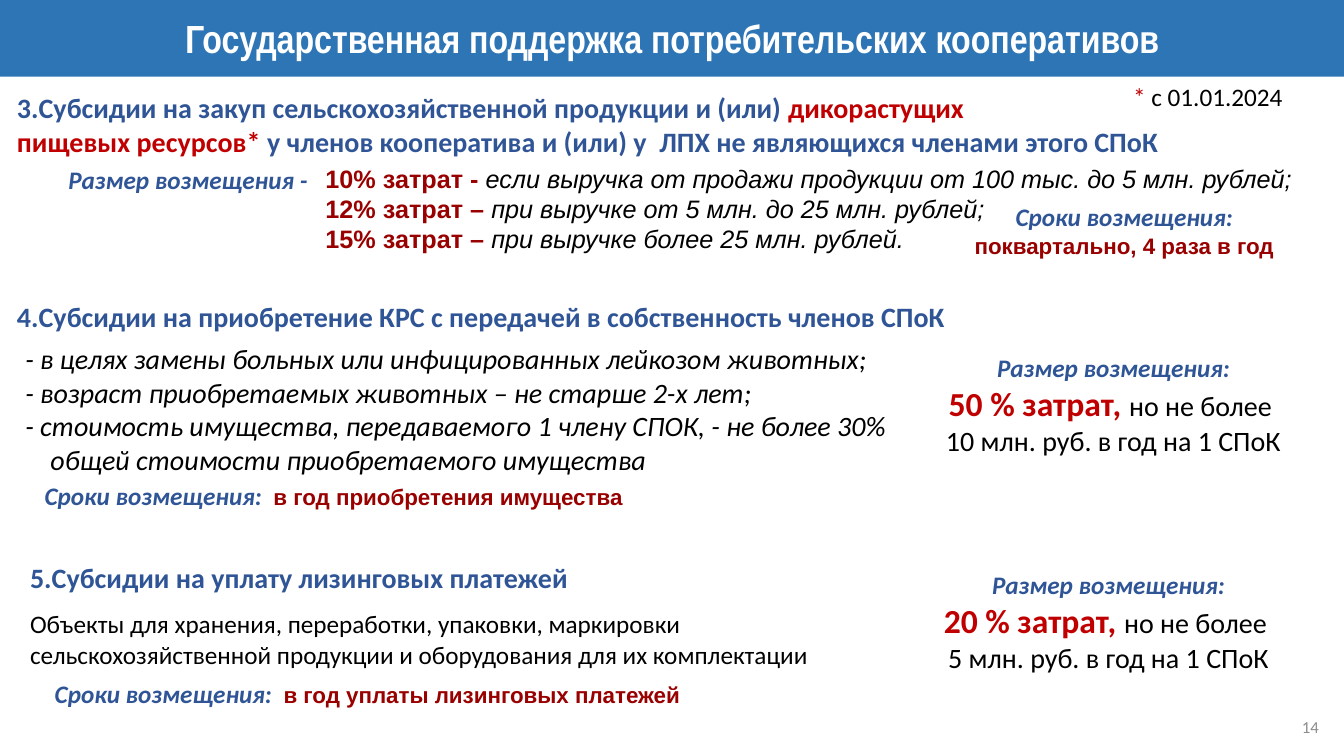
from pptx import Presentation
from pptx import util as u
from pptx.dml.color import RGBColor
from pptx.enum import shapes, text
from pptx.oxml.ns import qn

W, H = u.Inches(13.33), u.Inches(7.5)
LEFT, CENTER, RIGHT = text.PP_ALIGN.LEFT, text.PP_ALIGN.CENTER, text.PP_ALIGN.RIGHT

COLORS = {"white": "FFFFFF", "banner": "2E75B6", "blue": "2F5597", "red": "C00000",
          "dark_red": "990000", "black": "000000", "gray": "8C8C8C"}

# Text styles: font, size, colour, bold, italic
STYLES = {
    "title": ("Arial Narrow", 28, "white", True, False),
    "heading": ("Calibri", 20, "blue", True, False),
    "accent": ("Calibri", 20, "red", True, False),
    "label": ("Calibri", 18, "blue", True, True),
    "rate": ("Arial", 18, "dark_red", True, False),
    "condition": ("Arial", 18, "black", False, True),
    "term": ("Arial", 16, "dark_red", True, False),
    "list": ("Calibri", 20, "black", False, True),
    "share": ("Calibri", 24, "red", True, False),
    "limit": ("Calibri", 20, "black", False, False),
    "plain": ("Calibri", 18, "black", False, False),
    "star": ("Calibri", 18, "red", False, False),
    "number": ("Calibri", 12, "gray", False, False),
}


def color(name):
    return RGBColor.from_string(COLORS[name])


def area(x, y, w, h):
    """Turn percentages of the slide into lengths."""
    return [int(side * share / 100) for side, share in zip((W, H, W, H), (x, y, w, h))]


def place(sp, box):
    sp.left, sp.top, sp.width, sp.height = area(*box)


def fill_white(sp):
    sp.fill.solid()
    sp.fill.fore_color.rgb = color("white")
    sp.line.color.rgb = color("white")
    sp.line.width = u.Pt(0.75)


def write(sp, lines, align=LEFT, anchor=text.MSO_ANCHOR.TOP, wrap=True):
    """Each line is a list of (style, text) pairs."""
    tf = sp.text_frame
    tf.word_wrap = wrap
    tf.auto_size = text.MSO_AUTO_SIZE.NONE
    tf.vertical_anchor = anchor
    for i, line in enumerate(lines):
        p = tf.paragraphs[0] if i == 0 else tf.add_paragraph()
        p.alignment = align
        p.space_before = u.Pt(0)
        for style, words in line:
            r = p.add_run()
            r.text = words
            font, size, ink, r.font.bold, r.font.italic = STYLES[style]
            r.font.name, r.font.size = font, u.Pt(size)
            r.font.color.rgb = color(ink)


def add_text(s, box, lines, **options):
    sp = s.shapes.add_textbox(*area(*box))
    write(sp, lines, **options)


def add_panel(s, box, lines):
    sp = s.shapes.add_shape(shapes.MSO_SHAPE.RECTANGLE, *area(*box))
    sp.shadow.inherit = False
    fill_white(sp)
    write(sp, lines)


def add_banner(s, words):
    sp = s.shapes.title
    place(sp, (0, 0, 100, 10.13))
    sp.fill.solid()
    sp.fill.fore_color.rgb = color("banner")
    write(sp, [[("title", words)]], align=CENTER, anchor=text.MSO_ANCHOR.MIDDLE)


def add_list(s, box, items):
    sp = s.placeholders[1]
    place(sp, box)
    fill_white(sp)
    write(sp, [[("list", item)] for item in items])
    # Typed dashes replace bullets; wrapped lines hang
    for p in sp.text_frame.paragraphs:
        pPr = p._p.get_or_add_pPr()
        pPr.set("marL", str(u.Inches(0.25)))
        pPr.set("indent", str(-u.Inches(0.25)))
        pPr.append(pPr.makeelement(qn("a:buNone"), {}))


def add_heading(s, x, y, words):
    add_text(s, (x, y, 97.4, 5.87), [[("heading", words)]])


def add_amount(s, x, y, share, limit):
    add_text(s, (x, y, 26.93, 15.73), [
        [("label", "Размер возмещения:")],
        [("share", share + " затрат, "), ("limit", "но не более ")],
        [("limit", limit + " в год на 1 СПоК")]], align=CENTER)


def add_terms(s, x, y, w, words):
    add_text(s, (x, y, w, 5.33),
             [[("label", "Сроки возмещения:  "), ("term", words)]], align=CENTER)


def main():
    prs = Presentation()
    prs.slide_width, prs.slide_height = W, H
    s = prs.slides.add_slide(prs.slide_layouts[1])
    add_banner(s, "Государственная поддержка потребительских кооперативов")

    # Section 3: purchase of produce
    add_panel(s, (4.35, 21.07, 19.7, 5.33), [[("label", "Размер возмещения -")]])
    add_text(s, (0.53, 11.33, 87.1, 10.27), [
        [("heading", "3.Субсидии на закуп сельскохозяйственной продукции и (или) "),
         ("accent", "дикорастущих")],
        [("accent", "пищевых ресурсов*"),
         ("heading", " у членов кооператива и (или) у  ЛПХ не являющихся членами этого СПоК")],
    ], wrap=False)
    add_text(s, (83.57, 10.13, 12.75, 5.33),
             [[("star", "*"), ("plain", " с 01.01.2024")]], wrap=False)
    rates = [
        ("10% затрат - ", "если выручка от продажи продукции от 100 тыс. до 5 млн. рублей;"),
        ("12% затрат – ", "при выручке от 5 млн. до 25 млн. рублей;"),
        ("15% затрат – ", "при выручке более 25 млн. рублей."),
    ]
    add_text(s, (23.48, 20.93, 76.5, 15.47),
             [[("rate", rate), ("condition", condition)] for rate, condition in rates])
    add_text(s, (70.67, 26, 25.96, 8.93), [
        [("label", "Сроки возмещения:")],
        [("term", "поквартально, 4 раза в год")]], align=CENTER)

    # Section 4: purchase of cattle
    add_heading(s, 0.53, 38.93,
                "4.Субсидии на приобретение КРС с передачей в собственность членов СПоК")
    add_list(s, (1.13, 44.53, 66.09, 23.73), [
        "- в целях замены больных или инфицированных лейкозом животных;",
        "- возраст приобретаемых животных – не старше 2-х лет;",
        "- стоимость имущества, передаваемого 1 члену СПОК, - не более 30% "
        "общей стоимости приобретаемого имущества"])
    add_terms(s, 1.5, 62.93, 46.66, "в год приобретения имущества")
    add_amount(s, 69.39, 46, "50 %", "10 млн. руб.")

    # Section 5: leasing payments
    add_heading(s, 1.5, 73.47, "5.Субсидии на уплату лизинговых платежей")
    add_panel(s, (1.5, 79.87, 65.42, 9.47), [[
        ("plain", "Объекты для хранения, переработки, упаковки, маркировки "
                  "сельскохозяйственной продукции и оборудования для их комплектации")]])
    add_terms(s, 0, 89.07, 54.69, "в год уплаты лизинговых платежей")
    add_amount(s, 69.02, 74.67, "20 %", "5 млн. руб.")

    # Slide number
    add_text(s, (76.37, 93.47, 22.5, 5.33), [[("number", "14")]],
             align=RIGHT, anchor=text.MSO_ANCHOR.MIDDLE)
    prs.save("out.pptx")


if __name__ == "__main__":
    main()
